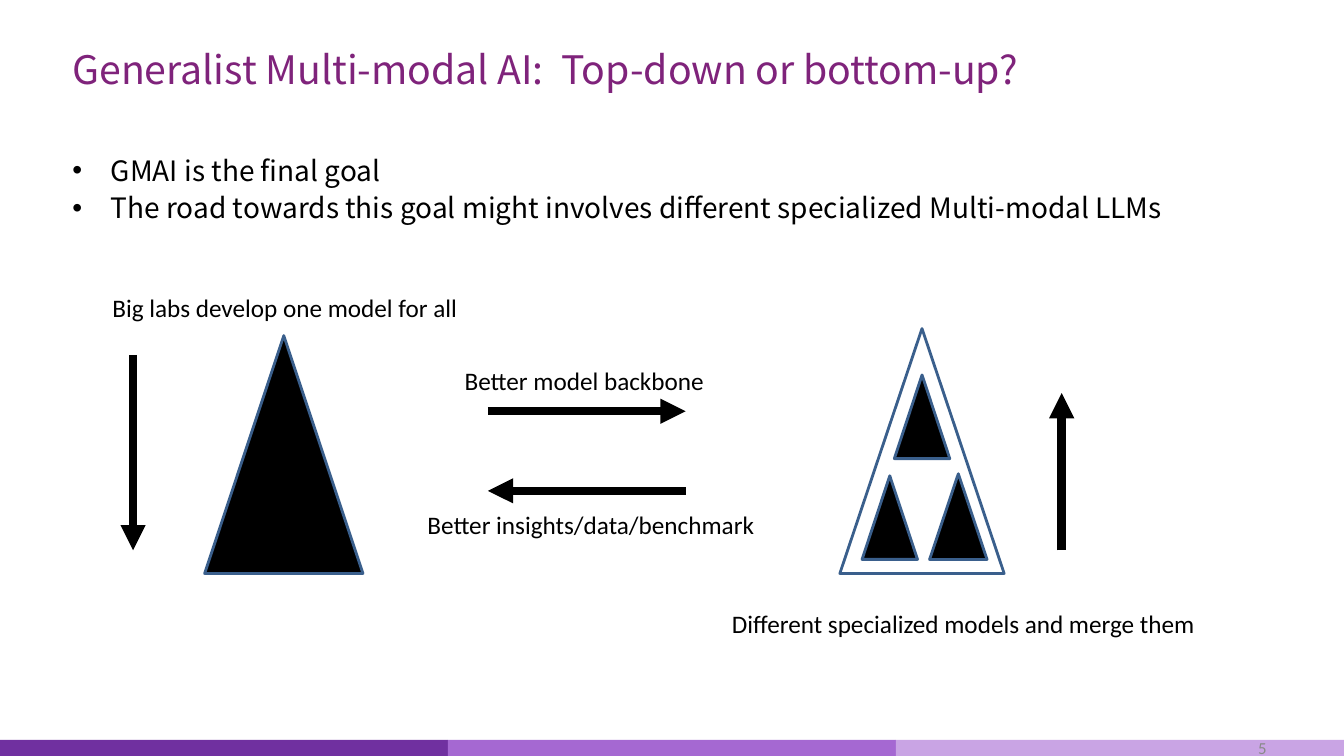
import pptx
import pptx.util
import pptx.dml.color
import pptx.enum.shapes
import pptx.enum.text
import pptx.oxml
import pptx.oxml.ns
from dataclasses import dataclass

Inches, Pt = pptx.util.Inches, pptx.util.Pt
Align, Anchor = pptx.enum.text.PP_ALIGN, pptx.enum.text.MSO_ANCHOR
Preset = pptx.enum.shapes.MSO_SHAPE

TITLE = "Generalist Multi-modal AI:  Top-down or bottom-up?"
POINTS = [
    "GMAI is the final goal",
    "The road towards this goal might involves different specialized Multi-modal LLMs",
]
PAGE_NUMBER = "5"
CAPTIONS = [
    ("Big labs develop one model for all", (0.97, 2.85, 3.71)),
    ("Different specialized models and merge them", (7.1, 5.99, 4.91)),
    ("Better model backbone", (4.49, 3.58, 2.61)),
    ("Better insights/data/benchmark", (4.12, 5, 3.48)),
]
CAPTION_HEIGHT = 0.4
BASELINE, INNER_BASELINE = 5.69, 5.55
EXCHANGE_LEFT, EXCHANGE_RIGHT = 4.84, 6.8
ARROW_FOOT = 5.46


@dataclass(frozen=True)
class Theme:
    heading: str = "7F237B"
    ink: str = "000000"
    outline: str = "3A5F8C"
    number: str = "898989"
    bands: tuple = ("7030A0", "A568D2", "C9A4E4")
    heading_font: str = "Noto Sans CJK SC"
    caption_font: str = "Calibri"
    title_size: int = 28
    point_size: int = 20
    caption_size: int = 18
    number_size: int = 12


theme = Theme()
TRIANGLES = [
    (2.03, BASELINE, 1.57, 2.36, theme.ink),
    (8.33, BASELINE, 1.63, 2.43, None),
    (8.55, INNER_BASELINE, 0.55, 0.83, theme.ink),
    (9.22, INNER_BASELINE, 0.57, 0.85, theme.ink),
    (8.87, 4.55, 0.55, 0.83, theme.ink),
]
ARROWS = [
    (1.32, 3.52, 1.32, ARROW_FOOT),
    (10.53, ARROW_FOOT, 10.53, 3.9),
    (EXCHANGE_LEFT, 4.08, EXCHANGE_RIGHT, 4.08),
    (EXCHANGE_RIGHT, 4.87, EXCHANGE_LEFT, 4.87),
]

deck = pptx.Presentation()
deck.slide_width, deck.slide_height = Inches(13.33), Inches(7.5)
slide = deck.slides.add_slide(deck.slide_layouts[6])


def color(code):
    return pptx.dml.color.RGBColor.from_string(code)


def add_xml(parent, tag, **attributes):
    child = pptx.oxml.parse_xml(f"<a:{tag} {pptx.oxml.ns.nsdecls('a')}/>")
    for name, value in attributes.items():
        child.set(name, value)
    parent.append(child)


def add_figure(preset, box, fill, outline=None):
    figure = slide.shapes.add_shape(preset, *map(Inches, box))
    figure.shadow.inherit = False
    if fill:
        figure.fill.solid()
        figure.fill.fore_color.rgb = color(fill)
    else:
        figure.fill.background()
    if outline:
        figure.line.color.rgb = color(outline)
        figure.line.width = Pt(2)
    else:
        figure.line.fill.background()


def add_text(lines, box, font, size, ink, align=Align.LEFT, anchor=Anchor.TOP,
             wrap=True, bullets=False):
    frame = slide.shapes.add_textbox(*map(Inches, box)).text_frame
    frame.word_wrap = wrap
    frame.vertical_anchor = anchor
    frame.text = "\n".join(lines)
    for index, paragraph in enumerate(frame.paragraphs):
        paragraph.alignment = align
        if bullets:
            if index:
                paragraph.space_before = Pt(3)
            properties = paragraph._p.get_or_add_pPr()
            properties.set("marL", str(Inches(0.38)))
            properties.set("indent", str(-Inches(0.38)))
            add_xml(properties, "buFont", typeface="Arial")
            add_xml(properties, "buChar", char="•")
        for run in paragraph.runs:
            run.font.name = font
            run.font.size = Pt(size)
            run.font.color.rgb = color(ink)
    return frame


def add_arrow(ends):
    arrow = slide.shapes.add_connector(
        pptx.enum.shapes.MSO_CONNECTOR.STRAIGHT, *map(Inches, ends))
    arrow.line.color.rgb = color(theme.ink)
    arrow.line.width = Pt(6)
    add_xml(arrow.line._get_or_add_ln(), "tailEnd", type="triangle")
    add_xml(arrow._element.spPr, "effectLst")


band_width = 13.33 / len(theme.bands)
for column, band in enumerate(theme.bands):
    add_figure(Preset.RECTANGLE, (column * band_width, 7.34, band_width, 0.16), band)

add_text([TITLE], (0.62, 0.3, 11.66, 0.77), theme.heading_font, theme.title_size,
         theme.heading, anchor=Anchor.MIDDLE)
add_text(POINTS, (0.62, 1.47, 12.05, 5.23), theme.heading_font, theme.point_size,
         theme.ink, bullets=True)
number_frame = add_text([PAGE_NUMBER], (9.55, 7.33, 3.11, 0.17), theme.caption_font,
                        theme.number_size, theme.number, Align.RIGHT, Anchor.MIDDLE)
number_frame.margin_top = number_frame.margin_bottom = 0

for left, base, width, height, fill in TRIANGLES:
    add_figure(Preset.ISOSCELES_TRIANGLE, (left, base - height, width, height),
               fill, theme.outline)
for ends in ARROWS:
    add_arrow(ends)
for caption, place in CAPTIONS:
    add_text([caption], (*place, CAPTION_HEIGHT), theme.caption_font,
             theme.caption_size, theme.ink, Align.CENTER, wrap=False)

deck.save("out.pptx")
